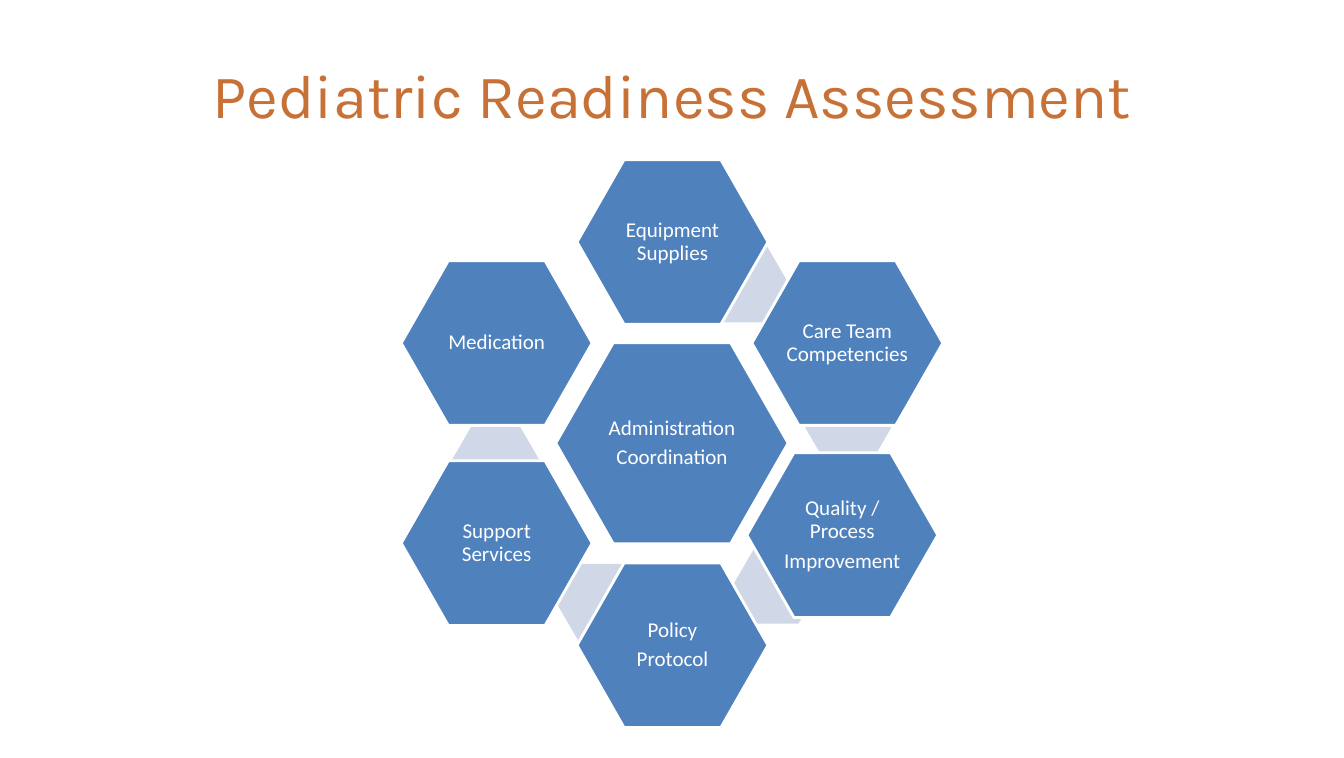
import dataclasses

import pptx
import pptx.dml.color
import pptx.enum.shapes
import pptx.enum.text
import pptx.util

PX = 9144  # EMU per px, 100 px to the inch
BLUE, PALE, WHITE, ORANGE = "4F81BD", "D0D8E8", "FFFFFF", "C87137"
CENTER_SIZE, CELL_SIZE, LINK_SIZE = (230, 199), (189, 163), (87, 75)


@dataclasses.dataclass
class Cell:
    left: int
    top: int
    lines: list[str]
    link: tuple[int, int] | None = None  # pale hexagon behind the cell
    size: tuple[int, int] = CELL_SIZE


# Back to front
CELLS = [
    Cell(550, 339, ["Administration", "Coordination"], size=CENTER_SIZE),
    Cell(571, 158, ["Equipment Supplies"], (694, 244)),
    Cell(744, 258, ["Care Team Competencies"], (796, 384)),
    Cell(739, 448, ["Quality / Process", "Improvement"], (725, 542)),
    Cell(571, 557, ["Policy", "Protocol"], (550, 558)),
    Cell(397, 456, ["Support Services"], (447, 418)),
    Cell(397, 258, ["Medication"]),
]


def px(n: int) -> pptx.util.Emu:
    return pptx.util.Emu(n * PX)


def rgb(color: str) -> pptx.dml.color.RGBColor:
    return pptx.dml.color.RGBColor.from_string(color)


def style(p, text: str, font: str, size: int, color: str) -> None:
    p.text = text
    p.alignment = pptx.enum.text.PP_ALIGN.CENTER
    p.font.name = font
    p.font.size = pptx.util.Pt(size)
    p.font.color.rgb = rgb(color)


def add_hexagon(s, left: int, top: int, size: tuple[int, int], fill: str, adj: float):
    sp = s.shapes.add_shape(
        pptx.enum.shapes.MSO_SHAPE.HEXAGON, px(left), px(top), px(size[0]), px(size[1])
    )
    sp.adjustments[0] = adj
    sp.shadow.inherit = False
    sp.fill.solid()
    sp.fill.fore_color.rgb = rgb(fill)
    sp.line.fill.background()
    return sp


def add_cell(s, cell: Cell) -> None:
    if cell.link:
        add_hexagon(s, *cell.link, LINK_SIZE, PALE, 0.29)
    sp = add_hexagon(s, cell.left, cell.top, cell.size, BLUE, 0.286)
    sp.line.color.rgb = rgb(WHITE)
    sp.line.width = pptx.util.Pt(2)
    tf = sp.text_frame
    tf.word_wrap = True
    tf.vertical_anchor = pptx.enum.text.MSO_ANCHOR.MIDDLE
    tf.margin_left = tf.margin_right = tf.margin_top = tf.margin_bottom = px(2)
    for i, line in enumerate(cell.lines):
        p = tf.add_paragraph() if i else tf.paragraphs[0]
        style(p, line, "Calibri", 15, WHITE)
        p.line_spacing = 0.9
        p.space_after = pptx.util.Pt(5)


def main() -> None:
    prs = pptx.Presentation()
    prs.slide_width, prs.slide_height = px(1330), px(750)
    s = prs.slides.add_slide(prs.slide_layouts[5])

    # Title
    title = s.shapes.title
    title.left, title.top, title.width, title.height = px(67), px(30), px(1197), px(125)
    title.text_frame.vertical_anchor = pptx.enum.text.MSO_ANCHOR.MIDDLE
    style(title.text_frame.paragraphs[0], "Pediatric Readiness Assessment", "Karla", 44, ORANGE)

    # Hexagon ring
    for cell in CELLS:
        add_cell(s, cell)

    prs.save("out.pptx")


if __name__ == "__main__":
    main()
